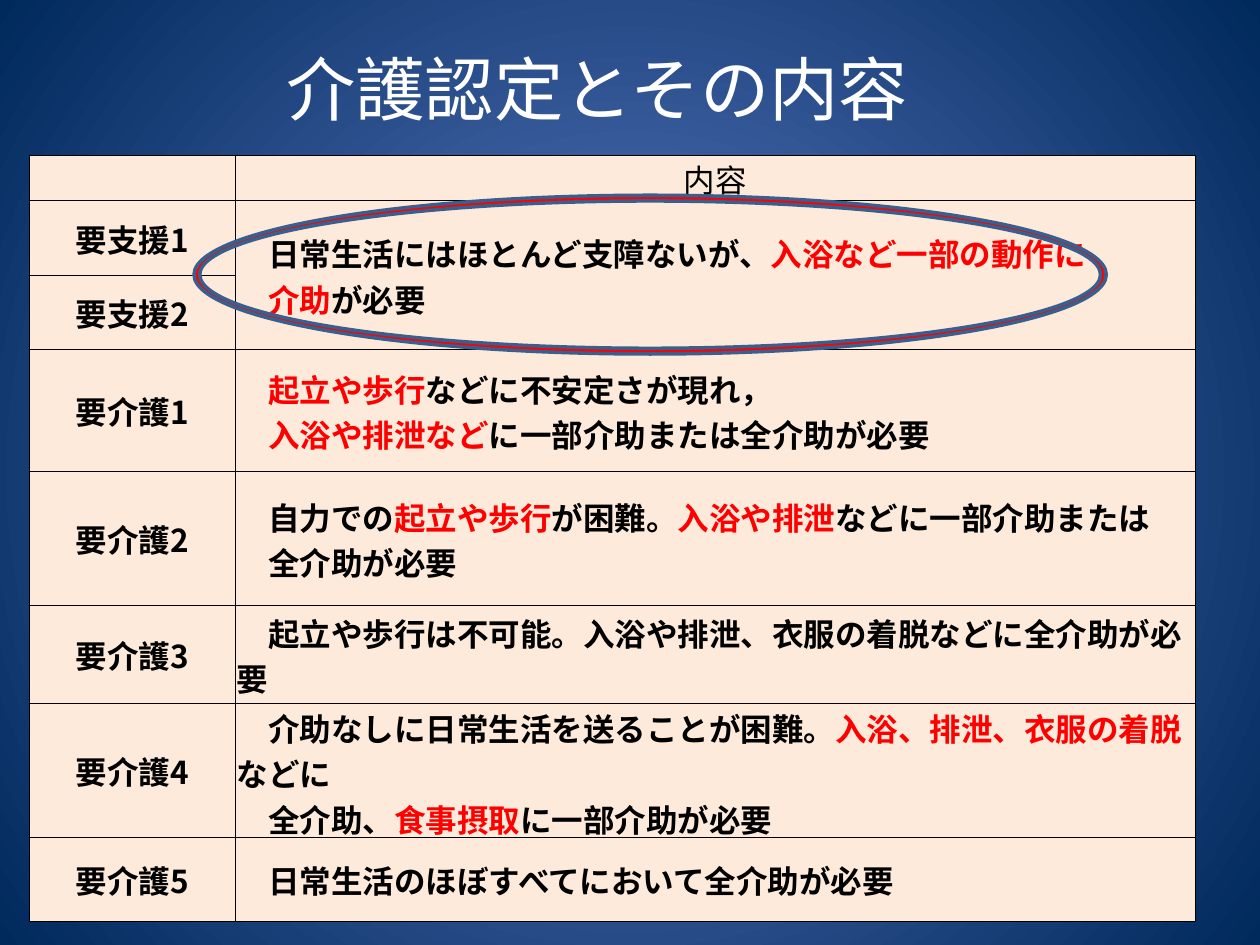
from dataclasses import dataclass

from lxml import etree
from pptx import Presentation
from pptx import util as u
from pptx.dml.color import RGBColor
from pptx.enum import shapes, text
from pptx.oxml import parse_xml
from pptx.oxml.ns import qn

Pt = u.Pt
NS = "http://schemas.openxmlformats.org/drawingml/2006/main"


@dataclass(frozen=True)
class Theme:
    """Colours, fonts and sizes of the slide."""
    glow: str = "5E7CC5"
    navy: str = "00295C"
    white: str = "FFFFFF"
    ink: str = "000000"
    red: str = "FF0000"
    cream: str = "FDEADA"
    ring_line: str = "3A5F8C"
    title_font: str = "Calibri"
    body_font: str = "Noto Sans CJK JP"
    title_size: float = 39.6
    body_size: float = 18


T = Theme()
HEADING = "介護認定とその内容"
HEADER = "内容"
ROW_HEIGHTS = [26, 42.5, 42.5, 70, 76.3, 56.2, 76.3, 48.2]
COLUMN_WIDTHS = [118, 548.5]
LEVELS = ["要支援1", "要支援2", "要介護1", "要介護2", "要介護3", "要介護4", "要介護5"]
# Text between bars is red.
DETAILS = {
    1: ["　日常生活にはほとんど支障ないが、|入浴など一部の動作に|", "|　介助|が必要"],
    3: ["|　起立や歩行|などに不安定さが現れ，", "|　入浴や排泄など|に一部介助または全介助が必要"],
    4: ["　自力での|起立や歩行|が困難。|入浴や排泄|などに一部介助または", "　全介助が必要"],
    5: ["　起立や歩行は不可能。入浴や排泄、衣服の着脱などに全介助が必要"],
    6: ["　介助なしに日常生活を送ることが困難。|入浴、排泄、衣服の着脱|などに",
        "　全介助、|食事摂取|に一部介助が必要"],
    7: ["　日常生活のほぼすべてにおいて全介助が必要"],
}


def rgb(value):
    """Return a colour object for a hex string."""
    return RGBColor.from_string(value)


def add_run(p, words, font, size, color, bold=False):
    """Add one styled run to a paragraph."""
    r = p.add_run()
    r.text = words
    r.font.name, r.font.size, r.font.bold = font, Pt(size), bold
    r.font.color.rgb = rgb(color)
    return r


def paint_background(s):
    """Fill the slide with a radial gradient."""
    s.background.fill.solid()
    bg_pr = s.background._cSld.bg.bgPr
    stops = "".join(f'<a:gs pos="{pos}"><a:srgbClr val="{color}"/></a:gs>'
                    for pos, color in ((0, T.glow), (100000, T.navy)))
    bg_pr.replace(bg_pr[0], parse_xml(
        f'<a:gradFill xmlns:a="{NS}" rotWithShape="1"><a:gsLst>{stops}</a:gsLst>'
        '<a:path path="circle"><a:fillToRect l="50000" t="50000" r="50000" b="50000"/>'
        '</a:path></a:gradFill>'))


def add_title(s, x, y, w, h):
    """Place the centred slide title."""
    tf = s.shapes.add_textbox(Pt(x), Pt(y), Pt(w), Pt(h)).text_frame
    tf.word_wrap = True
    tf.vertical_anchor = text.MSO_ANCHOR.MIDDLE
    p = tf.paragraphs[0]
    p.alignment = text.PP_ALIGN.CENTER
    add_run(p, HEADING, T.title_font, T.title_size, T.white)


def style_cell(cell):
    """Give a cell its borders, fill, margins and anchor."""
    tc_pr = cell._tc.get_or_add_tcPr()
    for side in ("lnL", "lnR", "lnT", "lnB"):
        ln = etree.SubElement(tc_pr, qn(f"a:{side}"), w=str(Pt(0.5)))
        fill = etree.SubElement(ln, qn("a:solidFill"))
        etree.SubElement(fill, qn("a:srgbClr"), val=T.ink)
    cell.fill.solid()
    cell.fill.fore_color.rgb = rgb(T.cream)
    cell.margin_left = cell.margin_right = cell.margin_top = Pt(0.72)
    cell.margin_bottom = 0
    cell.vertical_anchor = text.MSO_ANCHOR.MIDDLE


def write_cell(cell, lines, align, bold=True):
    """Write lines into a cell, with red text between bars."""
    tf = cell.text_frame
    for i, line in enumerate(lines):
        p = tf.add_paragraph() if i else tf.paragraphs[0]
        p.alignment = align
        for k, words in enumerate(line.split("|")):
            if words:
                r = add_run(p, words, T.body_font, T.body_size, T.red if k % 2 else T.ink, bold)
                etree.SubElement(r.font._element, qn("a:ea"), typeface=T.body_font)


def add_care_table(s, x, y):
    """Place the table of care levels and their descriptions."""
    table = s.shapes.add_table(
        len(ROW_HEIGHTS), len(COLUMN_WIDTHS), Pt(x), Pt(y),
        Pt(sum(COLUMN_WIDTHS)), Pt(sum(ROW_HEIGHTS))).table
    table.first_row = table.horz_banding = False
    for row, height in zip(table.rows, ROW_HEIGHTS):
        row.height = Pt(height)
    for column, width in zip(table.columns, COLUMN_WIDTHS):
        column.width = Pt(width)
    for cell in table.iter_cells():
        style_cell(cell)
    table.cell(1, 1).merge(table.cell(2, 1))
    write_cell(table.cell(0, 1), [HEADER], text.PP_ALIGN.CENTER, bold=False)
    for i, level in enumerate(LEVELS, 1):
        write_cell(table.cell(i, 0), [level], text.PP_ALIGN.CENTER)
    for i, lines in DETAILS.items():
        write_cell(table.cell(i, 1), lines, text.PP_ALIGN.LEFT)


def add_highlight_ring(s, x, y, w, h):
    """Place the thin ring around the support levels."""
    sp = s.shapes.add_shape(shapes.MSO_SHAPE.DONUT, Pt(x), Pt(y), Pt(w), Pt(h))
    sp.shadow.inherit = False
    sp.adjustments[0] = 0.036
    sp.fill.solid()
    sp.fill.fore_color.rgb = rgb(T.red)
    sp.line.color.rgb = rgb(T.ring_line)
    sp.line.width = Pt(2)


def main():
    """Build and save the slide."""
    prs = Presentation()
    prs.slide_width, prs.slide_height = Pt(720), Pt(540)
    s = prs.slides.add_slide(prs.slide_layouts[6])
    paint_background(s)
    add_title(s, 36, 21.6, 610.5, 57)
    add_care_table(s, 16.6, 88.6)
    add_highlight_ring(s, 110.9, 111.6, 521.3, 90.7)
    prs.save("out.pptx")


if __name__ == "__main__":
    main()
